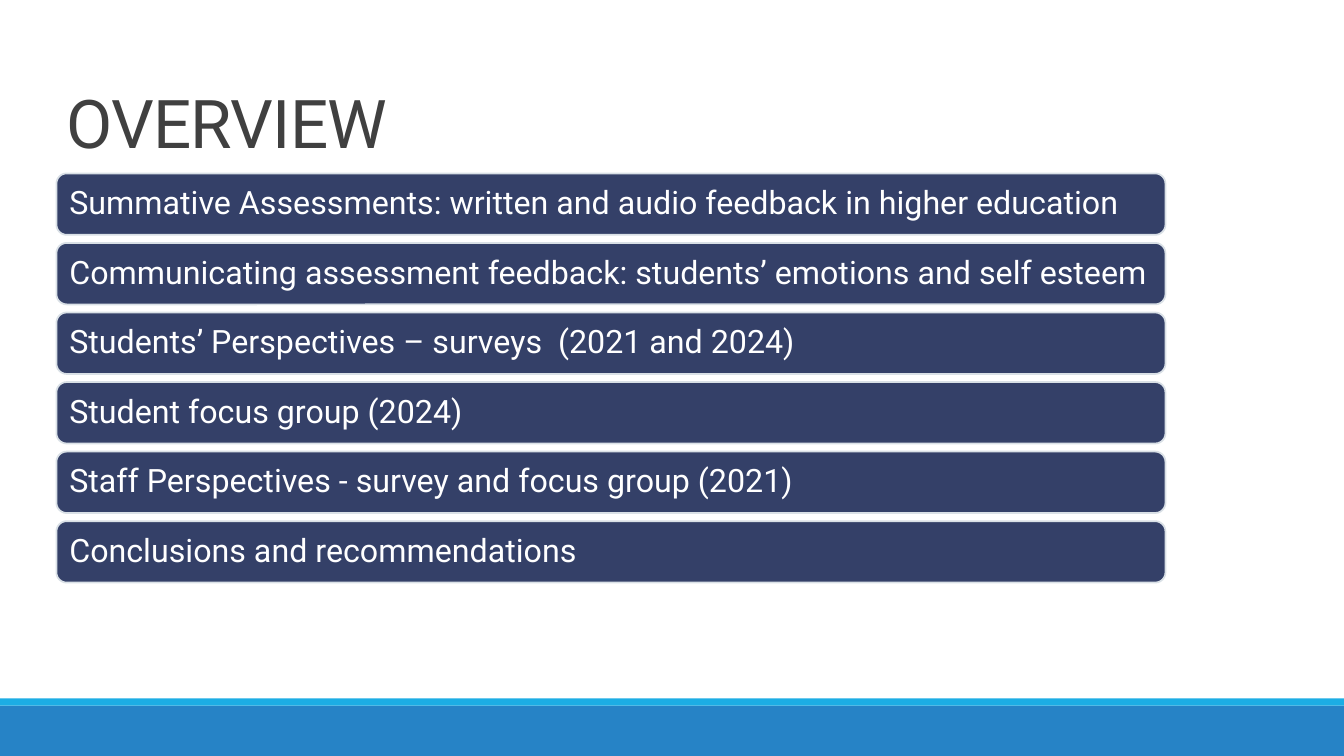
from dataclasses import dataclass

from pptx import Presentation
from pptx import util as u
from pptx.dml.color import RGBColor
from pptx.enum import shapes, text
from pptx.shapes.autoshape import Shape
from pptx.slide import Slide


@dataclass(frozen=True)
class Theme:
    font: str = "Roboto"
    title_size: float = 48
    topic_size: float = 23
    title_color: str = "404040"
    topic_color: str = "FFFFFF"
    topic_fill: str = "344068"
    topic_line: str = "D9E0E6"
    footer_fill: str = "2683C6"
    accent_fill: str = "1CADE4"


@dataclass(frozen=True)
class Area:
    left: float
    top: float
    width: float
    height: float

    def lengths(self) -> tuple[u.Length, ...]:
        return tuple(u.Inches(v) for v in (self.left, self.top, self.width, self.height))


THEME = Theme()
SLIDE_WIDTH, SLIDE_HEIGHT = 13.33, 7.5
MARGIN, CONTENT_WIDTH = 0.56, 11
FIRST_TOP, TOPIC_HEIGHT, TOPIC_PITCH = 1.72, 0.61, 0.69
TOPIC_INSET = 0.1

TITLE = "OVERVIEW"
TOPICS = (
    "Summative Assessments: written and audio feedback in higher education",
    "Communicating assessment feedback: students’ emotions and self esteem",
    "Students’ Perspectives – surveys  (2021 and 2024)",
    "Student focus group (2024)",
    "Staff Perspectives - survey and focus group (2021)",
    "Conclusions and recommendations",
)
FOOTER_BANDS = (
    (Area(0, 7, SLIDE_WIDTH, 0.5), THEME.footer_fill),
    (Area(0, 6.93, SLIDE_WIDTH, 0.07), THEME.accent_fill),
)


def add_filled(page: Slide, kind: shapes.MSO_SHAPE, area: Area, fill: str) -> Shape:
    shape = page.shapes.add_shape(kind, *area.lengths())
    shape.shadow.inherit = False
    shape.fill.solid()
    shape.fill.fore_color.rgb = RGBColor.from_string(fill)
    shape.line.fill.background()
    return shape


def write(shape: Shape, words: str, size: float, color: str, spacing: float) -> None:
    """Put one left-aligned paragraph in the shape."""
    shape.text_frame.word_wrap = True
    para = shape.text_frame.paragraphs[0]
    para.text = words
    para.alignment = text.PP_ALIGN.LEFT
    para.line_spacing = spacing
    para.font.name = THEME.font
    para.font.size = u.Pt(size)
    para.font.color.rgb = RGBColor.from_string(color)


def add_title(page: Slide) -> None:
    box = page.shapes.add_textbox(*Area(MARGIN, 0.07, CONTENT_WIDTH, 1.59).lengths())
    write(box, TITLE, THEME.title_size, THEME.title_color, 0.85)
    box.text_frame.vertical_anchor = text.MSO_ANCHOR.BOTTOM
    span = box.text_frame.paragraphs[0].runs[0]
    span.font._element.set("spc", "-50")


def add_topic(page: Slide, words: str, top: float) -> None:
    area = Area(MARGIN, top, CONTENT_WIDTH, TOPIC_HEIGHT)
    bar = add_filled(page, shapes.MSO_SHAPE.ROUNDED_RECTANGLE, area, THEME.topic_fill)
    bar.line.color.rgb = RGBColor.from_string(THEME.topic_line)
    bar.line.width = u.Pt(1.25)
    write(bar, words, THEME.topic_size, THEME.topic_color, 0.9)
    frame = bar.text_frame
    frame.vertical_anchor = text.MSO_ANCHOR.MIDDLE
    frame.margin_left = frame.margin_right = u.Inches(TOPIC_INSET)
    frame.margin_top = frame.margin_bottom = u.Inches(TOPIC_INSET)


def main() -> None:
    deck = Presentation()
    deck.slide_width = u.Inches(SLIDE_WIDTH)
    deck.slide_height = u.Inches(SLIDE_HEIGHT)
    page = deck.slides.add_slide(deck.slide_layouts[6])
    for area, fill in FOOTER_BANDS:
        add_filled(page, shapes.MSO_SHAPE.RECTANGLE, area, fill)
    add_title(page)
    for row, words in enumerate(TOPICS):
        add_topic(page, words, FIRST_TOP + row * TOPIC_PITCH)
    deck.save("out.pptx")


if __name__ == "__main__":
    main()
